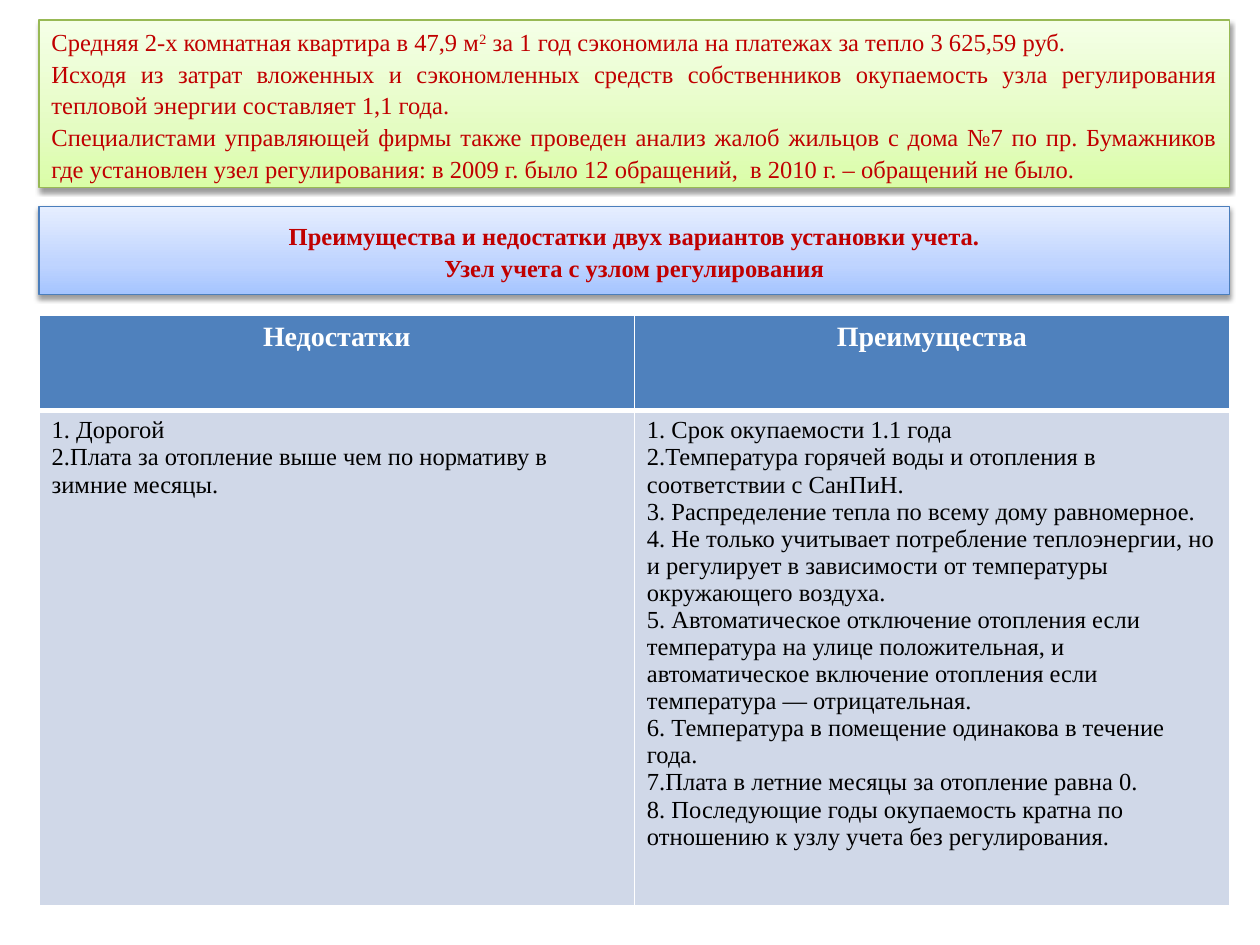
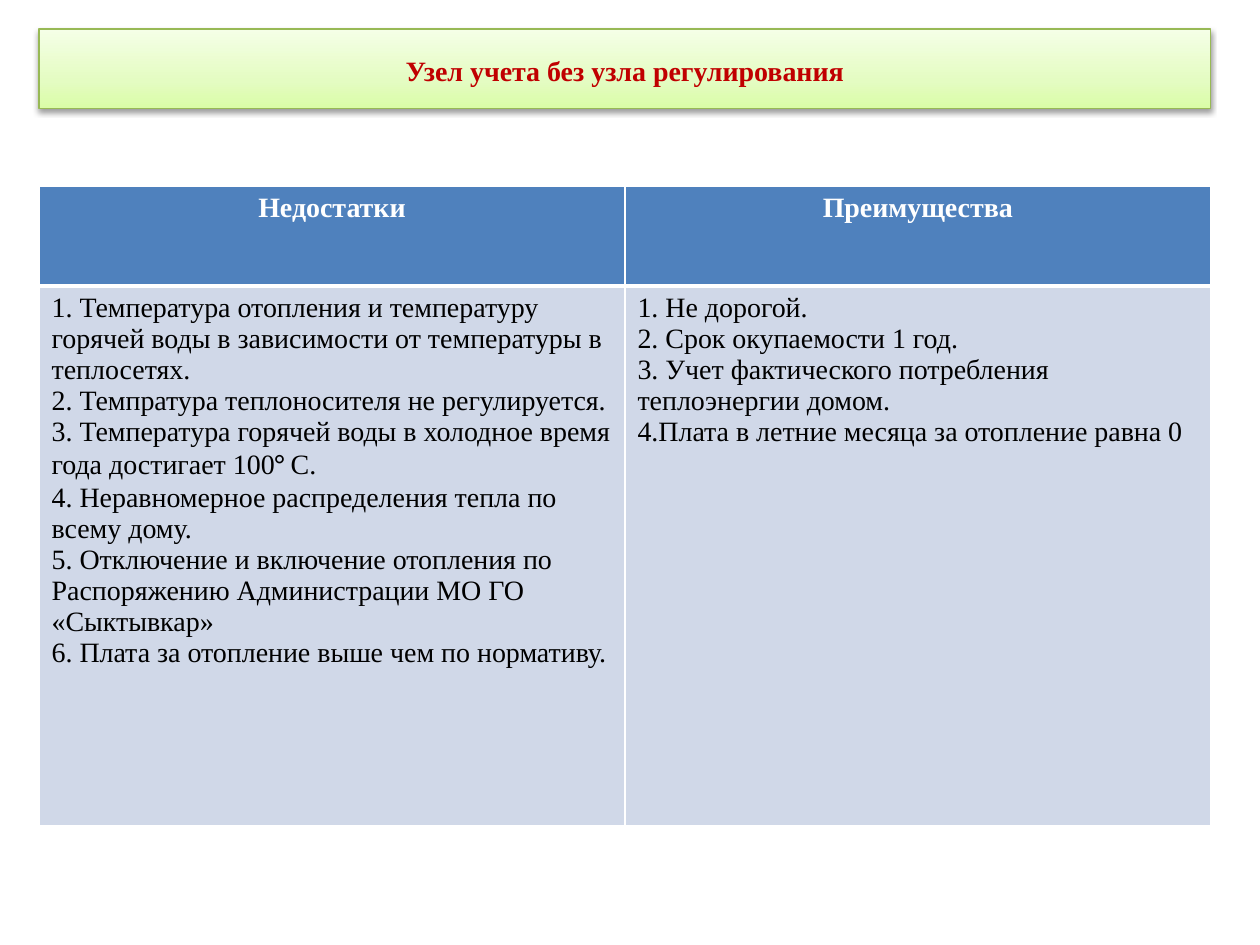
"""Build two slides comparing heat metering units with and without regulation."""
from copy import deepcopy
from lxml import etree
from pptx import Presentation, util as u
from pptx.dml.color import RGBColor
from pptx.enum import shapes, text
from pptx.oxml import ns

COLOURS = {"accent": "C00000", "header": "4F81BD", "body": "D0D8E8", "white": "FFFFFF", "black": "000000"}
BANDS = {
    "green": {"line": "98B955", "stops": [(0, "DAFDA7"), (0.35, "E4FCC2"), (1, "F5FFE7")]},
    "blue": {"line": "4B7EBC", "stops": [(0, "A4C4FF"), (0.35, "BFD4FF"), (1, "E6EEFF")]},
}
ALIGN = text.PP_ALIGN
FONT = "Times New Roman"
HEADINGS = ["Недостатки", "Преимущества"]

SLIDES = [
    {
        "width": 0.945,
        "bands": [
            {"top": 0.16, "height": 1.33, "style": "green", "size": 14, "bold": False, "align": ALIGN.JUSTIFY, "lines": [
                ["Средняя 2-х комнатная квартира в 47,9 м", ("2", {"raised": 30}),
                 " за 1 год сэкономила на платежах за тепло 3 625,59 руб."],
                "Исходя из затрат вложенных и сэкономленных средств собственников окупаемость узла "
                "регулирования тепловой энергии составляет 1,1 года.",
                "Специалистами управляющей фирмы также проведен анализ жалоб жильцов с дома №7 по пр. Бумажников "
                "где установлен узел регулирования: в 2009 г. было 12 обращений,  в 2010 г. – обращений не было.",
            ]},
            {"top": 1.64, "height": 0.7, "style": "blue", "size": 14, "bold": True, "align": ALIGN.CENTER, "lines": [
                "Преимущества и недостатки двух вариантов установки учета.",
                "Узел учета с узлом регулирования",
            ]},
        ],
        "table_top": 2.5, "rows": [0.76, 3.93], "size": 14,
        "drawbacks": [
            "1. Дорогой",
            "2.Плата за отопление выше чем по нормативу в зимние месяцы.",
        ],
        "benefits": [
            "1. Срок окупаемости 1.1 года",
            "2.Температура горячей воды и отопления в соответствии с СанПиН.",
            "3. Распределение тепла по всему дому равномерное.",
            "4. Не только учитывает потребление теплоэнергии, но и регулирует в зависимости от температуры "
            "окружающего воздуха.",
            "5. Автоматическое отключение отопления если температура на улице положительная, и автоматическое "
            "включение отопления если температура — отрицательная.",
            "6. Температура в помещение одинакова в течение года.",
            "7.Плата в летние месяцы за отопление равна 0.",
            "8. Последующие годы окупаемость кратна по отношению к узлу учета без регулирования.",
        ],
    },
    {
        "width": 0.93,
        "bands": [
            {"top": 0.23, "height": 0.63, "style": "green", "size": 16, "bold": True, "align": ALIGN.CENTER, "lines": [
                "Узел учета без узла регулирования",
            ]},
        ],
        "table_top": 1.48, "rows": [0.79, 4.28], "size": 16,
        "drawbacks": [
            "1. Температура отопления и температуру горячей воды в зависимости от температуры в теплосетях.",
            "2. Темпратура теплоносителя не регулируется.",
            ["3. Температура горячей воды в холодное время года достигает 100", ("° ", {"font": "Calibri"}), "С."],
            "4. Неравномерное распределения тепла по всему дому.",
            "5. Отключение и включение отопления по Распоряжению Администрации МО ГО «Сыктывкар»",
            "6. Плата за отопление выше чем по нормативу.",
        ],
        "benefits": [
            "1. Не дорогой.",
            "2. Срок окупаемости 1 год.",
            "3. Учет фактического потребления теплоэнергии домом.",
            "4.Плата в летние месяца за отопление равна 0",
        ],
    },
]


def write(frame, lines, size, colour, bold=False, align=ALIGN.LEFT, spacing=1.0):
    frame.word_wrap = True
    for number, line in enumerate(lines):
        paragraph = frame.paragraphs[0] if number == 0 else frame.add_paragraph()
        paragraph.alignment = align
        paragraph.line_spacing = spacing
        for piece in [line] if isinstance(line, str) else line:
            wording, special = (piece, {}) if isinstance(piece, str) else piece
            run = paragraph.add_run()
            run.text = wording
            run.font.name = special.get("font", FONT)
            run.font.size = u.Pt(size)
            run.font.bold = bold
            run.font.color.rgb = RGBColor.from_string(COLOURS[colour])
            if "raised" in special:
                run._r.get_or_add_rPr().set("baseline", str(special["raised"] * 1000))


def add_xml(parent, tag, **attributes):
    return etree.SubElement(parent, ns.qn(tag), {key: str(value) for key, value in attributes.items()})


deck = Presentation()
deck.slide_width, deck.slide_height = u.Inches(10), u.Inches(7.5)
left = int(deck.slide_width * 0.031)

for content in SLIDES:
    slide = deck.slides.add_slide(deck.slide_layouts[6])
    width = int(deck.slide_width * content["width"])

    for band in content["bands"]:
        style = BANDS[band["style"]]
        panel = slide.shapes.add_shape(shapes.MSO_SHAPE.RECTANGLE, left, u.Inches(band["top"]),
                                       width, u.Inches(band["height"]))
        panel.fill.gradient()
        panel.fill.gradient_angle = 90
        stop_list = panel._element.xpath(".//a:gsLst")[0]
        stop_list.insert(1, deepcopy(stop_list[0]))
        for stop, (position, colour) in zip(panel.fill.gradient_stops, style["stops"]):
            stop.position = position
            stop.color.rgb = RGBColor.from_string(colour)
        panel.line.color.rgb = RGBColor.from_string(style["line"])
        panel.line.width = u.Pt(0.75)
        panel.shadow.inherit = False
        effects = panel._element.spPr.find(ns.qn("a:effectLst"))
        shadow = add_xml(effects, "a:outerShdw", blurRad=u.Pt(3.1), dist=u.Pt(1.6), dir=5400000, rotWithShape=0)
        add_xml(add_xml(shadow, "a:srgbClr", val=COLOURS["black"]), "a:alpha", val=38000)
        panel.text_frame.vertical_anchor = text.MSO_ANCHOR.MIDDLE
        write(panel.text_frame, band["lines"], band["size"], "accent", bold=band["bold"],
              align=band["align"], spacing=1.08)

    comparison = slide.shapes.add_table(2, 2, left, u.Inches(content["table_top"]), width,
                                        u.Inches(sum(content["rows"]))).table
    comparison.horz_banding = False
    for row, height in zip(comparison.rows, content["rows"]):
        row.height = u.Inches(height)
    for column, (heading, points) in enumerate(zip(HEADINGS, [content["drawbacks"], content["benefits"]])):
        comparison.columns[column].width = width // 2
        header, body = comparison.cell(0, column), comparison.cell(1, column)
        write(header.text_frame, [heading], 16, "white", bold=True, align=ALIGN.CENTER)
        write(body.text_frame, points, content["size"], "black")
        for cell, fill, thick_side in [(header, "header", "B"), (body, "body", "T")]:
            properties = cell._tc.get_or_add_tcPr()
            for side in "LRTB":
                border = add_xml(properties, f"a:ln{side}", w=u.Pt(3 if side == thick_side else 1))
                add_xml(add_xml(border, "a:solidFill"), "a:srgbClr", val=COLOURS["white"])
            cell.fill.solid()
            cell.fill.fore_color.rgb = RGBColor.from_string(COLOURS[fill])

deck.save("out.pptx")
